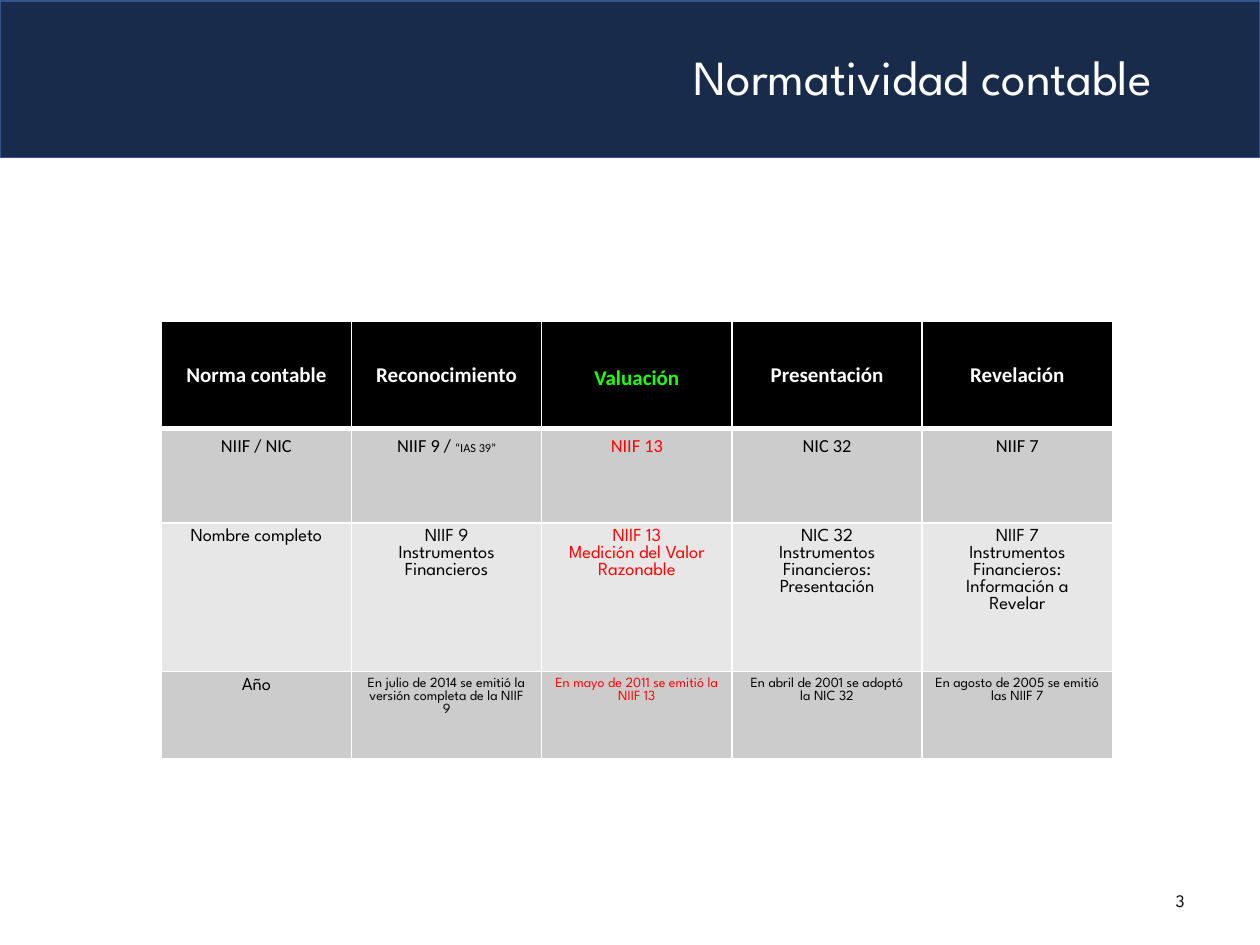
import pptx
import pptx.dml.color
import pptx.enum.shapes
import pptx.enum.text
import pptx.oxml
import pptx.oxml.ns
import pptx.util
from pptx.util import Inches

BODY_FONT = "League Spartan"
HEADER_FONT = "Calibri"
ALIGN = pptx.enum.text.PP_ALIGN
ANCHOR = pptx.enum.text.MSO_ANCHOR


def color(hex_value):
    return pptx.dml.color.RGBColor.from_string(hex_value)


def style_run(run, font_name, size, hex_value, bold=False):
    run.font.name = font_name
    run.font.size = pptx.util.Pt(size)
    run.font.bold = bold
    run.font.color.rgb = color(hex_value)


prs = pptx.Presentation()
prs.slide_width, prs.slide_height = Inches(10), Inches(7.5)
slide = prs.slides.add_slide(prs.slide_layouts[5])

# Header band, behind the title
band = slide.shapes.add_shape(
    pptx.enum.shapes.MSO_SHAPE.RECTANGLE, 0, Inches(0.01), Inches(10), Inches(1.24))
band.shadow.inherit = False
band.fill.solid()
band.fill.fore_color.rgb = color("182B4A")
band.line.color.rgb = color("325491")
band.line.width = pptx.util.Pt(1)
slide.shapes.title.element.addprevious(band.element)

title = slide.shapes.title
title.left, title.top = Inches(0.72), Inches(0.13)
title.width, title.height = Inches(8.62), Inches(1.45)
title_frame = title.text_frame
title_frame.text = "Normatividad contable"
title_frame.auto_size = pptx.enum.text.MSO_AUTO_SIZE.NONE
title_frame.vertical_anchor = ANCHOR.MIDDLE
title_frame.margin_right = Inches(0.2)
title_frame.margin_bottom = Inches(0.5)
title_frame.paragraphs[0].alignment = ALIGN.RIGHT
title_frame.paragraphs[0].line_spacing = 0.9
style_run(title_frame.paragraphs[0].runs[0], BODY_FONT, 28, "FFFFFF")

# Accounting standards: one list per row, a line break starts a new paragraph
rows = [
    ["Norma contable", "Reconocimiento", "Valuación", "Presentación", "Revelación"],
    ["NIIF / NIC", "NIIF 9 / ", "NIIF 13", "NIC 32", "NIIF 7"],
    ["Nombre completo", "NIIF 9\nInstrumentos Financieros",
     "NIIF 13\nMedición del Valor Razonable",
     "NIC 32\nInstrumentos Financieros: Presentación",
     "NIIF 7\nInstrumentos Financieros: Información a\nRevelar"],
    ["Año", "En julio de 2014 se emitió la versión completa de la NIIF 9",
     "En mayo de 2011 se emitió la NIIF 13",
     "En abril de 2001 se adoptó\nla NIC 32",
     "En agosto de 2005 se emitió las NIIF 7"],
]
row_heights = [0.85, 0.75, 1.18, 0.69]
row_fills = ["000000", "CCCCCC", "E7E7E7", "CCCCCC"]
VALUATION = 2

standards = slide.shapes.add_table(
    4, 5, Inches(1.28), Inches(2.55), Inches(7.55), Inches(sum(row_heights))).table
for column in standards.columns:
    column.width = Inches(1.51)

for r, texts in enumerate(rows):
    standards.rows[r].height = Inches(row_heights[r])
    is_header = r == 0
    font_name = HEADER_FONT if r < 2 else BODY_FONT
    for c, text in enumerate(texts):
        cell = standards.cell(r, c)
        cell.text_frame.text = text
        cell.vertical_anchor = ANCHOR.MIDDLE if is_header else ANCHOR.TOP
        if c == VALUATION:
            text_color = "23FF10" if is_header else "FF0000"
        else:
            text_color = "FFFFFF" if is_header else "000000"
        size = 12 if is_header else 8 if r == 3 and c > 0 else 10.5
        for paragraph in cell.text_frame.paragraphs:
            paragraph.alignment = ALIGN.CENTER
            for run in paragraph.runs:
                style_run(run, font_name, size, text_color, is_header)

        # Borders come before the fill in the cell properties
        cell_properties = cell._tc.get_or_add_tcPr()
        for side in ("lnL", "lnR", "lnT", "lnB"):
            thick = (is_header and side == "lnB") or (r == 1 and side == "lnT")
            cell_properties.append(pptx.oxml.parse_xml(
                f'<a:{side} {pptx.oxml.ns.nsdecls("a")} w="{pptx.util.Pt(3 if thick else 1)}">'
                '<a:solidFill><a:srgbClr val="FFFFFF"/></a:solidFill>'
                f'</a:{side}>'))
        cell.fill.solid()
        cell.fill.fore_color.rgb = color(row_fills[r])

standards.cell(0, VALUATION).margin_top = Inches(0.1)
former_standard = standards.cell(1, 1).text_frame.paragraphs[0].add_run()
former_standard.text = "“IAS 39”"
style_run(former_standard, HEADER_FONT, 7, "000000")

page_number = slide.shapes.add_textbox(
    Inches(7.17), Inches(6.95), Inches(2.33), Inches(0.4)).text_frame
page_number.word_wrap = True
page_number.vertical_anchor = ANCHOR.MIDDLE
page_number.text = "3"
page_number.paragraphs[0].alignment = ALIGN.RIGHT
style_run(page_number.paragraphs[0].runs[0], BODY_FONT, 10, "000000")

prs.save("out.pptx")
